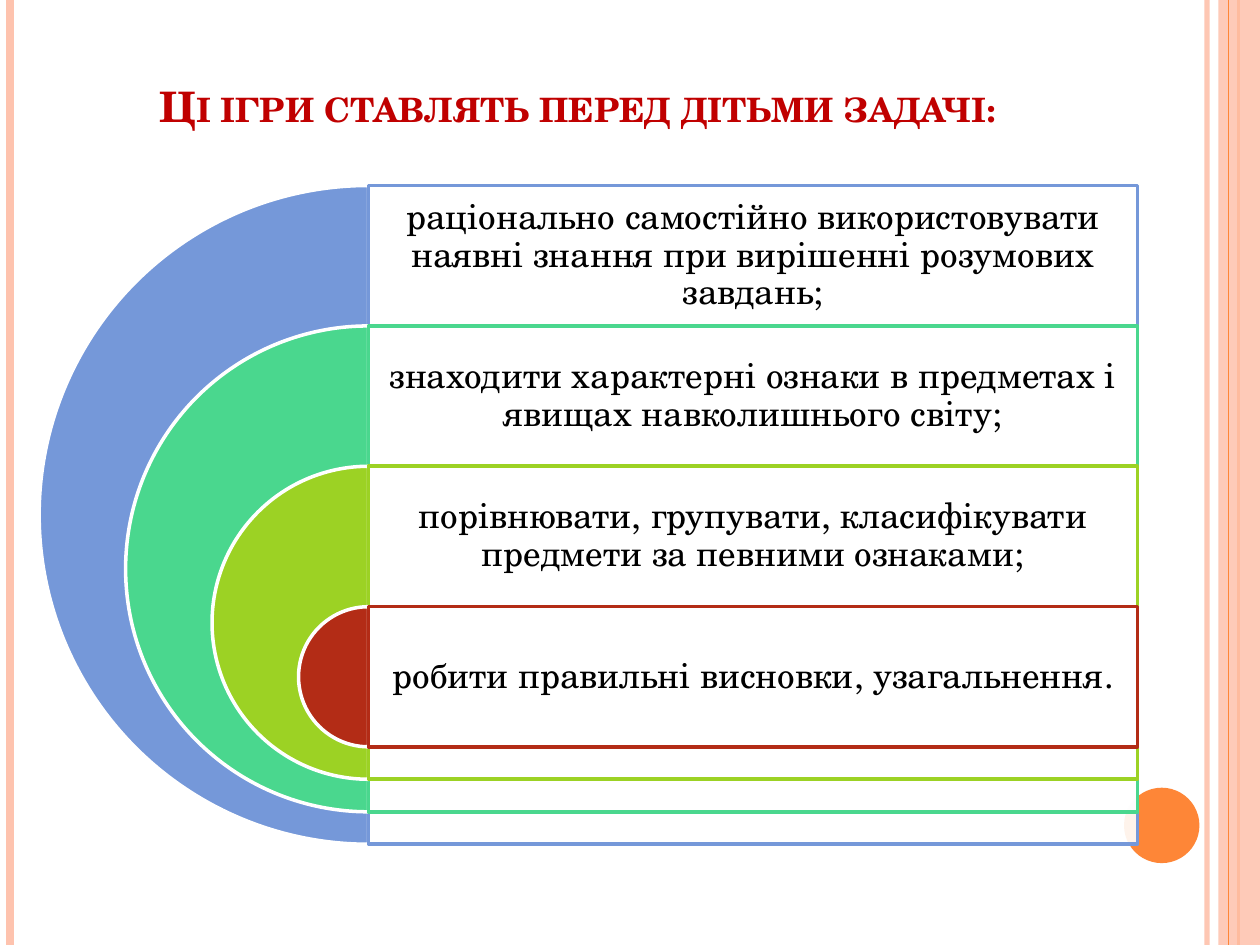
import dataclasses

import lxml.etree
import pptx
import pptx.dml.color
import pptx.enum.shapes
import pptx.enum.text
import pptx.oxml.ns
import pptx.util

Cm = pptx.util.Cm
Pt = pptx.util.Pt
Kind = pptx.enum.shapes.MSO_SHAPE
Anchor = pptx.enum.text.MSO_ANCHOR
qn = pptx.oxml.ns.qn


@dataclasses.dataclass(frozen=True)
class Theme:
    font: str = "TeX Gyre Schola"
    white: str = "FFFFFF"
    ink: str = "000000"
    title: str = "C00000"
    peach: str = "FEC3AE"
    orange: str = "FE8637"
    head: float = 24
    body: float = 20
    edge: float = 2


@dataclasses.dataclass(frozen=True)
class Box:
    left: float
    top: float
    width: float
    height: float

    def place(self) -> tuple:
        return Cm(self.left), Cm(self.top), Cm(self.width), Cm(self.height)


@dataclasses.dataclass(frozen=True)
class Stripe:
    x: float
    color: str
    weight: float
    alpha: int = 100


@dataclasses.dataclass(frozen=True)
class Task:
    color: str
    text: str


THEME = Theme()
WIDE, HIGH = 25.4, 19.05
UNDER = [
    Stripe(24.33, THEME.peach, 3, 93),
    Stripe(0.2, THEME.peach, 4.5),
    Stripe(24.97, THEME.orange, 1.5),
]
OVER = Stripe(24.76, THEME.orange, 0.75)
TASKS = [
    Task("7598D9", "раціонально самостійно використовувати наявні знання при вирішенні розумових завдань;"),
    Task("4AD78E", "знаходити характерні ознаки в предметах і явищах навколишнього світу;"),
    Task("9CD224", "порівнювати, групувати, класифікувати предмети за певними ознаками;"),
    Task("B32C16", "робити правильні висновки, узагальнення."),
]
AXIS, TOP = 7.43, 3.74      # centre line of the rings, top of the largest
ROW, SPAN = 2.83, 15.5      # height and width of a text row
RING, SHRINK = 13.28, 3.485  # largest diameter, loss per ring


def paint(fill, color: str, alpha: int = 100) -> None:
    """Set a solid colour with an opacity in percent."""
    fill.solid()
    fill.fore_color.rgb = pptx.dml.color.RGBColor.from_string(color)
    if alpha < 100:
        node = fill._xPr.find(qn("a:solidFill"))[0]
        lxml.etree.SubElement(node, qn("a:alpha"), val=str(alpha * 1000))


def add_stripe(slide, item: Stripe) -> None:
    x = Cm(item.x)
    line = slide.shapes.add_connector(
        pptx.enum.shapes.MSO_CONNECTOR.STRAIGHT, x, 0, x, Cm(HIGH))
    line.line.width = Pt(item.weight)
    paint(line.line.fill, item.color, item.alpha)
    lxml.etree.SubElement(line._element.spPr, qn("a:effectLst"))


def add_form(slide, kind, box: Box, color: str, edge: str = "", alpha: int = 100):
    form = slide.shapes.add_shape(kind, *box.place())
    form.shadow.inherit = False
    paint(form.fill, color, alpha)
    if edge:
        form.line.width = Pt(THEME.edge)
        paint(form.line.fill, edge)
    else:
        form.line.fill.background()
    return form


def add_text(slide, box: Box, text: str, size: float, color: str, anchor):
    """Add a centred text box and return its font."""
    frame = slide.shapes.add_textbox(*box.place()).text_frame
    frame.word_wrap = True
    frame.vertical_anchor = anchor
    frame.margin_left = frame.margin_right = Cm(0.2)
    frame.text = text
    para = frame.paragraphs[0]
    para.alignment = pptx.enum.text.PP_ALIGN.CENTER
    font = para.runs[0].font
    font.name, font.size = THEME.font, Pt(size)
    paint(font.fill, color)
    return para


def add_task(slide, rank: int, task: Task) -> None:
    """Draw a half ring, its frame and its text row."""
    size = RING - rank * SHRINK
    top = TOP + rank * ROW
    pie = add_form(slide, Kind.PIE, Box(AXIS - size / 2, top, size, size),
                   task.color, THEME.white)
    pie.adjustments[0], pie.adjustments[1] = 54, 162
    add_form(slide, Kind.RECTANGLE, Box(AXIS, top, SPAN, size),
             THEME.white, task.color, 90)
    para = add_text(slide, Box(AXIS, top, SPAN, ROW), task.text,
                    THEME.body, THEME.ink, Anchor.MIDDLE)
    para.line_spacing = 0.9


def main() -> None:
    deck = pptx.Presentation()
    deck.slide_width, deck.slide_height = Cm(WIDE), Cm(HIGH)
    slide = deck.slides.add_slide(deck.slide_layouts[6])

    for item in UNDER:
        add_stripe(slide, item)
    add_form(slide, Kind.RECTANGLE, Box(24.56, 0, 0.84, HIGH), THEME.peach, alpha=87)
    add_stripe(slide, OVER)
    add_form(slide, Kind.OVAL, Box(22.66, 15.88, 1.52, 1.52), THEME.orange)

    title = add_text(slide, Box(1.27, 0.76, 20.75, 2), "Ці ігри ставлять перед дітьми задачі:",
                     THEME.head, THEME.title, Anchor.BOTTOM)
    font = title.runs[0].font
    font.bold = True
    font._element.set("cap", "small")

    for rank, task in enumerate(TASKS):
        add_task(slide, rank, task)
    deck.save("out.pptx")


if __name__ == "__main__":
    main()
